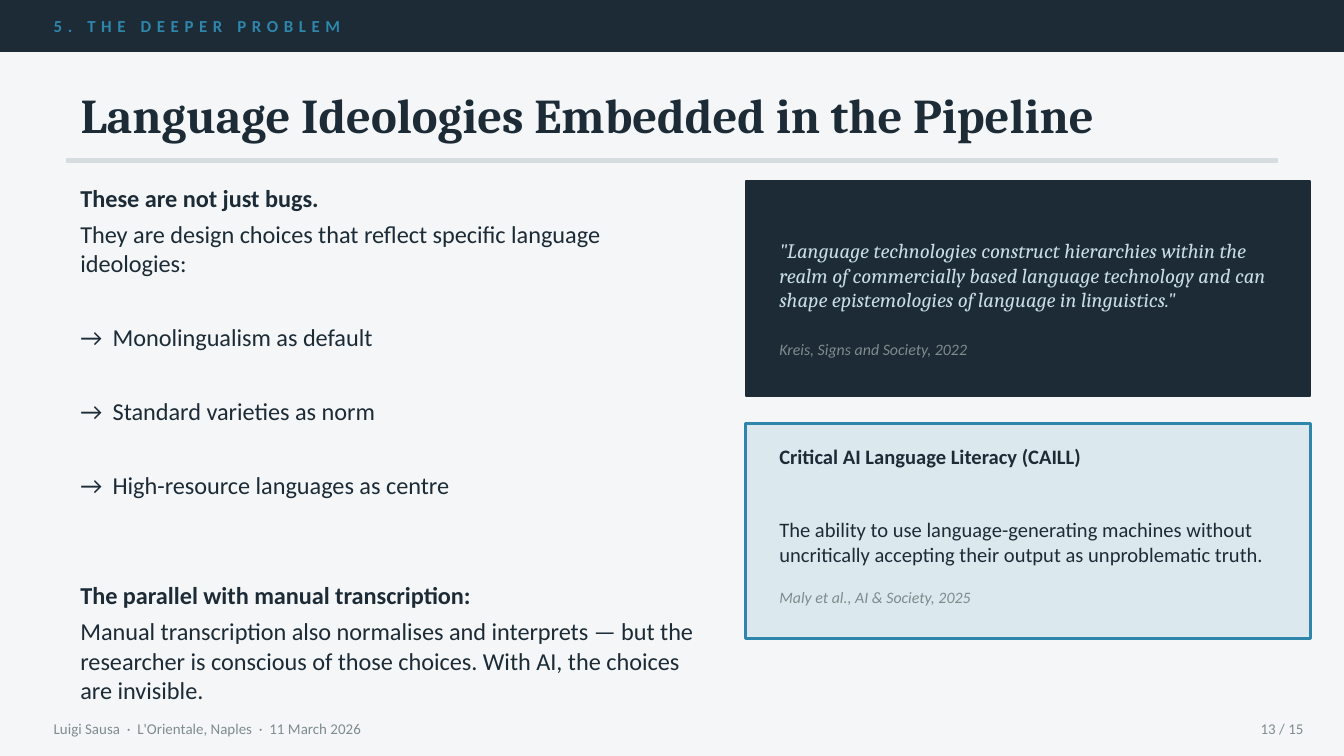
from lxml import etree
from pptx import Presentation
from pptx.dml.color import RGBColor
from pptx.enum.shapes import MSO_SHAPE
from pptx.enum.text import MSO_ANCHOR, PP_ALIGN
from pptx.oxml.ns import qn
from pptx.util import Inches, Pt

DARK, BLUE, GREY = "1C2B36", "2E86AB", "7F8C8D"
BACKGROUND, RULE, PALE = "F4F6F7", "D5DDE0", "C8DCE8"
SANS, SERIF = "Calibri", "Cambria"
ARROW_INDENT = Inches(0.24)


def color(hex_string):
    return RGBColor.from_string(hex_string)


def style(paragraph, size, hex_color, face=SANS, bold=False, italic=False):
    font = paragraph.font
    font.size, font.name = Pt(size), face
    font.bold, font.italic = bold, italic
    font.color.rgb = color(hex_color)


def add_panel(slide, left, top, width, height, fill, line=None, weight=1, alpha=None):
    panel = slide.shapes.add_shape(MSO_SHAPE.RECTANGLE, Inches(left), Inches(top),
                                   Inches(width), Inches(height))
    panel.shadow.inherit = False
    panel.fill.solid()
    panel.fill.fore_color.rgb = color(fill)
    panel.line.color.rgb = color(line or fill)
    panel.line.width = Pt(weight)
    if alpha is not None:
        fill_color = panel.fill._xPr.find(qn("a:solidFill"))[0]
        etree.SubElement(fill_color, qn("a:alpha")).set("val", str(alpha * 1000))


def add_frame(slide, left, top, width, height, inset=True):
    frame = slide.shapes.add_textbox(Inches(left), Inches(top),
                                     Inches(width), Inches(height)).text_frame
    frame.word_wrap = True
    frame.vertical_anchor = MSO_ANCHOR.MIDDLE
    if not inset:
        frame.margin_left = frame.margin_right = 0
        frame.margin_top = frame.margin_bottom = 0
    return frame


def add_line(slide, box, text, size, hex_color, inset=True, **look):
    paragraph = add_frame(slide, *box, inset=inset).paragraphs[0]
    paragraph.text = text
    style(paragraph, size, hex_color, **look)
    return paragraph


def hang_after_arrow(paragraph):
    properties = paragraph._p.get_or_add_pPr()
    properties.set("marL", str(ARROW_INDENT))
    properties.set("indent", str(-ARROW_INDENT))


def add_header(slide, left, top, width, height):
    add_panel(slide, left, top, width, height, DARK)
    section = add_line(slide, (left + 0.4, top, width - 0.8, height),
                       "5. THE DEEPER PROBLEM", 9, BLUE, inset=False, bold=True)
    section.runs[0].font._element.set("spc", "300")


def add_title(slide, left, top, width, height):
    title = slide.shapes.title
    title.left, title.top = Inches(left), Inches(top)
    title.width, title.height = Inches(width), Inches(height)
    title.text_frame.text = "Language Ideologies Embedded in the Pipeline"
    title.text_frame.vertical_anchor = MSO_ANCHOR.MIDDLE
    heading = title.text_frame.paragraphs[0]
    heading.alignment = PP_ALIGN.LEFT
    style(heading, 26, DARK, SERIF, bold=True)
    add_panel(slide, left, top + 0.68, width, 0.03, RULE)


def add_argument(slide, left, top, width, height):
    # Text, bold, space after in points
    points = [
        ("These are not just bugs.", True, 4),
        ("They are design choices that reflect specific language ideologies:",
         False, 24),
        ("→\tMonolingualism as default", False, 24),
        ("→\tStandard varieties as norm", False, 24),
        ("→\tHigh-resource languages as centre", False, 43),
        ("The parallel with manual transcription:", True, 4),
        ("Manual transcription also normalises and interprets — but the researcher "
         "is conscious of those choices. With AI, the choices are invisible.",
         False, 4),
    ]
    frame = add_frame(slide, left, top, width, height)
    for index, (text, bold, gap) in enumerate(points):
        paragraph = frame.add_paragraph() if index else frame.paragraphs[0]
        paragraph.text = text
        paragraph.space_after = Pt(gap)
        if text.startswith("→"):
            hang_after_arrow(paragraph)
        style(paragraph, 13, DARK, bold=bold)


def add_source(slide, left, top, width, citation):
    add_line(slide, (left, top, width, 0.22), citation, 8.5, GREY, italic=True)


def add_quote(slide, left, top, width, height):
    add_panel(slide, left, top, width, height, DARK)
    add_line(slide, (left + 0.15, top + 0.07, width - 0.3, 1.25),
             '"Language technologies construct hierarchies within the realm of '
             'commercially based language technology and can shape epistemologies '
             'of language in linguistics."', 11, PALE, face=SERIF, italic=True)
    add_source(slide, left + 0.15, top + 1.14, width - 0.3,
               "Kreis, Signs and Society, 2022")


def add_definition(slide, left, top, width, height):
    add_panel(slide, left, top, width, height, BLUE, weight=1.5, alpha=12)
    add_line(slide, (left + 0.15, top + 0.07, width - 0.3, 0.35),
             "Critical AI Language Literacy (CAILL)", 11, DARK, bold=True)
    add_line(slide, (left + 0.15, top + 0.43, width - 0.3, 0.9),
             "The ability to use language-generating machines without uncritically "
             "accepting their output as unproblematic truth.", 11, DARK)
    add_source(slide, left + 0.15, top + 1.18, width - 0.3,
               "Maly et al., AI & Society, 2025")


def add_footer(slide, left, top, width, height):
    add_line(slide, (left, top, 8, height),
             "Luigi Sausa  ·  L'Orientale, Naples  ·  11 March 2026",
             8, GREY, inset=False)
    page = add_line(slide, (left + width - 0.7, top, 0.7, height), "13 / 15",
                    8, GREY, inset=False)
    page.alignment = PP_ALIGN.RIGHT


def main():
    deck = Presentation()
    # Widescreen, 16:9
    deck.slide_width = Inches(10)
    deck.slide_height = Inches(10 * 9 / 16)
    slide = deck.slides.add_slide(deck.slide_layouts[5])
    slide.background.fill.solid()
    slide.background.fill.fore_color.rgb = color(BACKGROUND)

    # Section band and title
    add_header(slide, 0, 0, 10, 0.38)
    add_title(slide, 0.5, 0.5, 9, 0.7)

    # Argument on the left, cards on the right
    add_argument(slide, 0.5, 1.35, 4.8, 3.9)
    add_quote(slide, 5.55, 1.35, 4.2, 1.6)
    add_definition(slide, 5.55, 3.15, 4.2, 1.6)

    # Footer
    add_footer(slide, 0.4, 5.28, 9.3, 0.28)
    deck.save("out.pptx")


if __name__ == "__main__":
    main()
